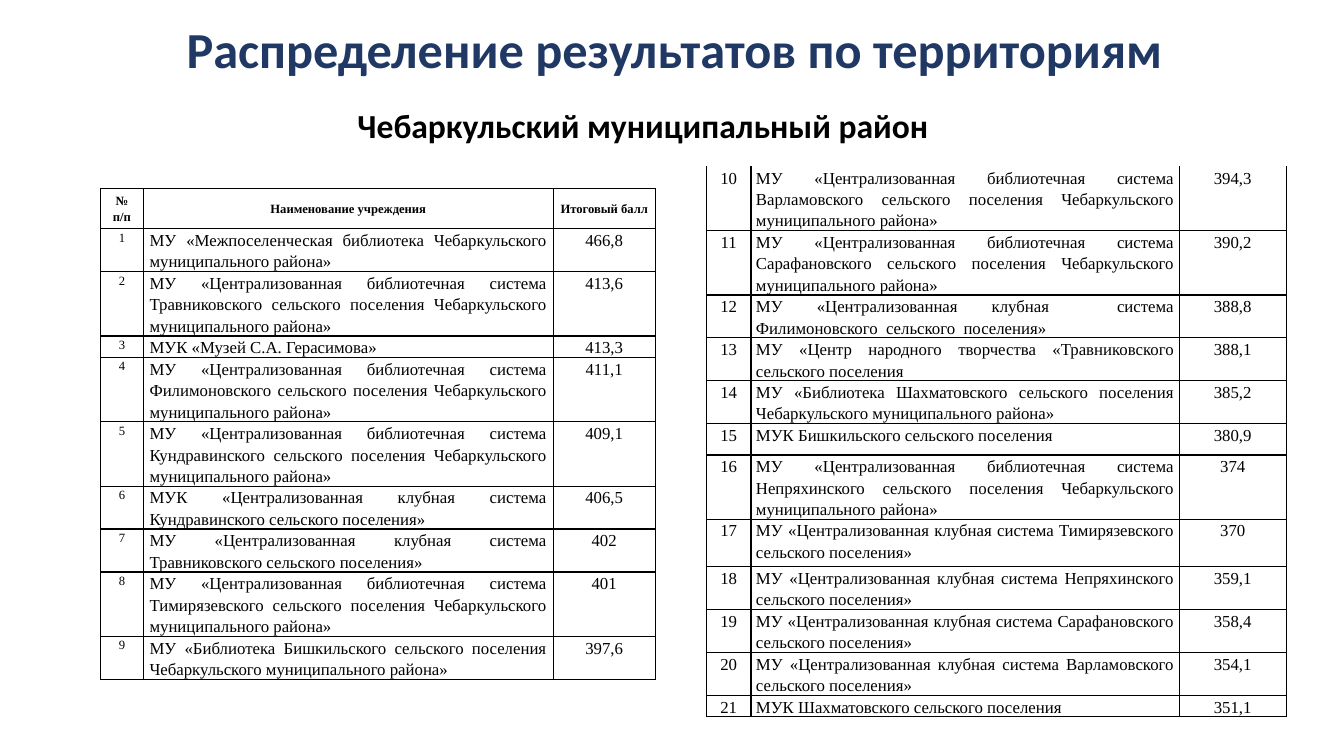
"""Build the slide with territorial results for the Chebarkul municipal district."""
from dataclasses import dataclass

import lxml.etree
import pptx
import pptx.dml.color
import pptx.enum.text
import pptx.oxml.ns
import pptx.slide
import pptx.table
import pptx.text.text
import pptx.util

Pt = pptx.util.Pt
ALIGN = pptx.enum.text.PP_ALIGN
ANCHOR = pptx.enum.text.MSO_ANCHOR


@dataclass(frozen=True)
class Theme:
    heading_font: str = "Calibri"
    table_font: str = "Times New Roman"
    navy: str = "203864"
    black: str = "000000"
    title_size: float = 36
    subtitle_size: float = 24
    body_size: float = 12
    small_size: float = 9
    border: float = 1


@dataclass(frozen=True)
class Entry:
    height: float
    name: str
    score: str


@dataclass(frozen=True)
class ScoreTable:
    left: float
    top: float
    widths: tuple[float, ...]
    inset: float
    number_size: float
    first_number: int
    entries: tuple[Entry, ...]
    header: tuple[str, ...] = ()
    header_height: float = 28.8


THEME = Theme()
LIBRARY = "МУ «Централизованная библиотечная система {} сельского поселения Чебаркульского муниципального района»"
CLUB = "МУ «Централизованная клубная система {} сельского поселения» "
BRANCH = "МУ «Библиотека {} сельского поселения Чебаркульского муниципального района»"

TABLES = (
    ScoreTable(
        72, 134.64, (30.24, 293.04, 72.72), 4.6, THEME.small_size, 1,
        (
            Entry(28.8, "МУ «Межпоселенческая библиотека Чебаркульского муниципального района»", "466,8"),
            Entry(43.2, LIBRARY.format("Травниковского"), "413,6"),
            Entry(14.4, "МУК «Музей С.А. Герасимова» ", "413,3"),
            Entry(43.2, LIBRARY.format("Филимоновского"), "411,1"),
            Entry(43.2, LIBRARY.format("Кундравинского"), "409,1"),
            Entry(28.8, "МУК «Централизованная клубная система Кундравинского сельского поселения» ", "406,5"),
            Entry(28.8, CLUB.format("Травниковского"), "402"),
            Entry(43.2, LIBRARY.format("Тимирязевского"), "401"),
            Entry(28.8, BRANCH.format("Бишкильского"), "397,6"),
        ),
        ("№ п/п", "Наименование учреждения", "Итоговый балл"),
    ),
    ScoreTable(
        504.72, 118.8, (31.68, 306, 76.32), 3.6, THEME.body_size, 10,
        (
            Entry(37.44, LIBRARY.format("Варламовского"), "394,3"),
            Entry(37.44, LIBRARY.format("Сарафановского"), "390,2"),
            Entry(25.2, "МУ «Централизованная клубная  система Филимоновского  сельского  поселения»", "388,8"),
            Entry(25.2, "МУ «Центр народного творчества «Травниковского сельского поселения", "388,1"),
            Entry(25.2, BRANCH.format("Шахматовского"), "385,2"),
            Entry(22.32, "МУК Бишкильского сельского поселения ", "380,9"),
            Entry(37.44, LIBRARY.format("Непряхинского"), "374"),
            Entry(33.84, CLUB.format("Тимирязевского"), "370"),
            Entry(25.2, CLUB.format("Непряхинского"), "359,1"),
            Entry(25.2, CLUB.format("Сарафановского"), "358,4"),
            Entry(25.2, CLUB.format("Варламовского"), "354,1"),
            Entry(12.24, "МУК Шахматовского сельского поселения ", "351,1"),
        ),
    ),
)


def write(tf: pptx.text.text.TextFrame, text: str, *, size: float, font: str = THEME.table_font,
          color: str = THEME.black, bold: bool = False, align: ALIGN = ALIGN.CENTER,
          spacing: float = 1.15, before: float = 0) -> None:
    """Put one formatted paragraph into a text frame."""
    p = tf.paragraphs[0]
    p.alignment, p.line_spacing, p.space_before = align, spacing, Pt(before)
    r = p.add_run()
    r.text = text
    r.font.name, r.font.size, r.font.bold = font, Pt(size), bold
    r.font.color.rgb = pptx.dml.color.RGBColor.from_string(color)


def draw_borders(cell: pptx.table._Cell, open_top: bool) -> None:
    """Line the cell's sides, leaving the top open if asked."""
    qn = pptx.oxml.ns.qn
    tc_pr = cell._tc.get_or_add_tcPr()
    for side in "LRTB":
        ln = lxml.etree.SubElement(tc_pr, qn(f"a:ln{side}"), w=str(Pt(THEME.border)))
        if side == "T" and open_top:
            lxml.etree.SubElement(ln, qn("a:noFill"))
        else:
            fill = lxml.etree.SubElement(ln, qn("a:solidFill"))
            lxml.etree.SubElement(fill, qn("a:srgbClr"), val=THEME.black)


def draw_table(slide: pptx.slide.Slide, spec: ScoreTable) -> None:
    """Draw a numbered table of institutions and scores."""
    rows = [(spec.header_height, spec.header)] if spec.header else []
    rows += [(e.height, (str(n), e.name, e.score)) for n, e in enumerate(spec.entries, spec.first_number)]
    height = sum(h for h, _ in rows)
    table = slide.shapes.add_table(len(rows), len(spec.widths), Pt(spec.left), Pt(spec.top),
                                   Pt(sum(spec.widths)), Pt(height)).table
    table.first_row = table.horz_banding = False
    for column, width in zip(table.columns, spec.widths):
        column.width = Pt(width)
    for i, (row_height, texts) in enumerate(rows):
        table.rows[i].height = Pt(row_height)
        is_header = bool(spec.header) and i == 0
        for j, text in enumerate(texts):
            cell = table.cell(i, j)
            cell.margin_left = cell.margin_right = Pt(spec.inset)
            cell.margin_top = cell.margin_bottom = 0
            cell.vertical_anchor = ANCHOR.MIDDLE if is_header else ANCHOR.TOP
            draw_borders(cell, open_top=i == 0 and not spec.header)
            cell.fill.background()
            size = THEME.small_size if is_header else spec.number_size if j == 0 else THEME.body_size
            align = ALIGN.JUSTIFY if j == 1 and not is_header else ALIGN.CENTER
            write(cell.text_frame, text, size=size, bold=is_header, align=align)


def main() -> None:
    """Assemble and save the slide."""
    prs = pptx.Presentation()
    prs.slide_width, prs.slide_height = Pt(960), Pt(540)
    slide = prs.slides.add_slide(prs.slide_layouts[5])

    title = slide.shapes.title
    title.left, title.top, title.width, title.height = Pt(72), Pt(12.96), Pt(828), Pt(48.24)
    subtitle = slide.shapes.add_textbox(Pt(105.12), Pt(64.8), Pt(708.48), Pt(43.2))
    for sp, anchor in ((title, ANCHOR.MIDDLE), (subtitle, ANCHOR.BOTTOM)):
        tf = sp.text_frame
        tf.word_wrap, tf.vertical_anchor = True, anchor
        tf.auto_size = pptx.enum.text.MSO_AUTO_SIZE.NONE
    write(title.text_frame, "Распределение результатов по территориям ", size=THEME.title_size,
          font=THEME.heading_font, color=THEME.navy, bold=True, spacing=0.9)
    write(subtitle.text_frame, "Чебаркульский муниципальный район", size=THEME.subtitle_size,
          font=THEME.heading_font, bold=True, spacing=0.9, before=10)

    for spec in TABLES:
        draw_table(slide, spec)
    prs.save("out.pptx")


if __name__ == "__main__":
    main()
